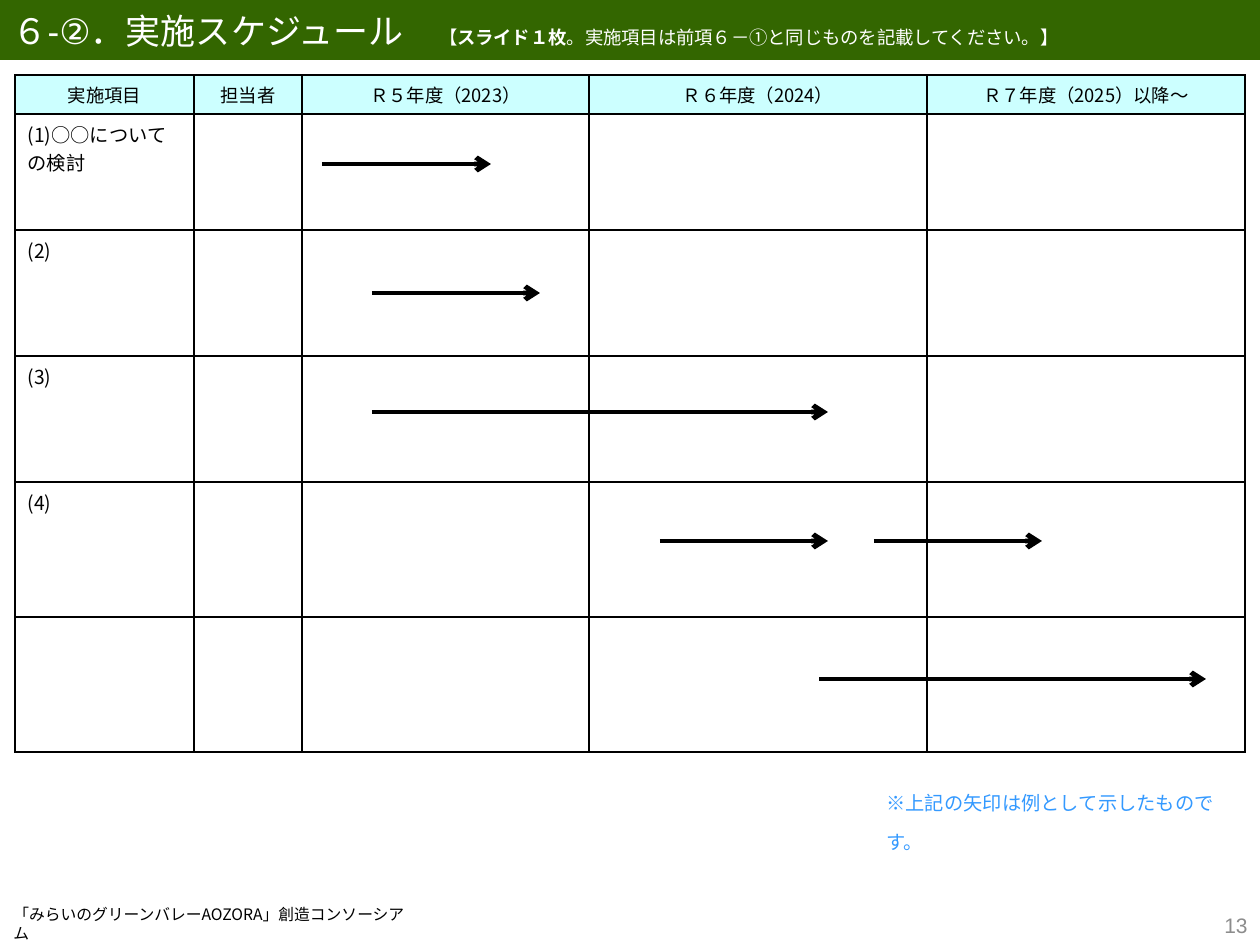
import pptx
import pptx.util
import pptx.dml.color
import pptx.enum.shapes
import pptx.enum.text
import pptx.oxml
import pptx.oxml.ns

RGB = pptx.dml.color.RGBColor
ALIGN = pptx.enum.text.PP_ALIGN
ANCHOR = pptx.enum.text.MSO_ANCHOR
NS = pptx.oxml.ns.nsdecls("a")

BLACK = RGB(0, 0, 0)
WHITE = RGB(0xFF, 0xFF, 0xFF)
GREEN = RGB(0x33, 0x66, 0x00)
CYAN = RGB(0xCC, 0xFF, 0xFF)
BLUE = RGB(0x33, 0x99, 0xFF)
GRAY = RGB(0x8C, 0x8C, 0x8C)
SANS = "Noto Sans CJK JP"

HEADS = ["実施項目", "担当者", "Ｒ５年度（2023）", "Ｒ６年度（2024）",
         "Ｒ７年度（2025）以降～"]
ITEMS = ["(1)○○についての検討", "(2)", "(3)", "(4)", ""]
COLS = [179, 108, 287, 338, 318]
ROWS = [35, 116, 126, 126, 135, 135]
# start x, end x and y, from the table's corner
SPANS = [(307, 476, 89), (357, 525, 218), (357, 813, 337),
         (645, 813, 466), (804, 1191, 604), (859, 1027, 466)]


def px(n):
    return pptx.util.Emu(round(n * 914400 / 126))


def write(para, text, size=11, font=SANS, color=BLACK, bold=False, align=ALIGN.LEFT):
    para.alignment = align
    run = para.add_run()
    run.text = text
    run.font.size = pptx.util.Pt(size)
    run.font.name = font
    run.font.bold = bold
    run.font.color.rgb = color
    run.font.fill._xPr.find(pptx.oxml.ns.qn("a:latin")).addnext(
        pptx.oxml.parse_xml(f'<a:ea {NS} typeface="{SANS}"/>'))


def title(slide, x, y, w, h):
    bar = slide.shapes.title
    bar.left, bar.top, bar.width, bar.height = map(px, (x, y, w, h))
    bar.fill.solid()
    bar.fill.fore_color.rgb = GREEN
    frame = bar.text_frame
    frame.auto_size = pptx.enum.text.MSO_AUTO_SIZE.NONE
    frame.vertical_anchor = ANCHOR.MIDDLE
    para = frame.paragraphs[0]
    write(para, "６-②．実施スケジュール　", size=20, font="Arial", color=WHITE)
    for text, bold in [("【", False), ("スライド１枚", True),
                       ("。実施項目は前項６－①と同じものを記載してください。】", False)]:
        write(para, text, size=10.5, font="Calibri", color=WHITE, bold=bold)


def border(cell):
    props = cell._tc.get_or_add_tcPr()
    for side in "LRTB":
        props.append(pptx.oxml.parse_xml(
            f'<a:ln{side} {NS} w="12700"><a:solidFill><a:srgbClr val="{BLACK}"/>'
            f'</a:solidFill></a:ln{side}>'))


def arrow(slide, x1, x2, y):
    line = slide.shapes.add_connector(
        pptx.enum.shapes.MSO_CONNECTOR.STRAIGHT, px(x1), px(y), px(x2), px(y))
    line.line.color.rgb = BLACK
    line.line.width = pptx.util.Pt(2.75)
    line.line._get_or_add_ln().append(
        pptx.oxml.parse_xml(f'<a:tailEnd {NS} type="arrow"/>'))
    line._element.spPr.append(pptx.oxml.parse_xml(f"<a:effectLst {NS}/>"))


def plan(slide, x, y):
    """Schedule table with its example arrows."""
    table = slide.shapes.add_table(len(ROWS), len(COLS), px(x), px(y),
                                   px(sum(COLS)), px(sum(ROWS))).table
    table.first_row = table.horz_banding = False
    for col, w in zip(table.columns, COLS):
        col.width = px(w)
    for row, h in zip(table.rows, ROWS):
        row.height = px(h)
    for cell in table.iter_cells():
        border(cell)
        cell.fill.background()
    for c, text in enumerate(HEADS):
        cell = table.cell(0, c)
        cell.fill.solid()
        cell.fill.fore_color.rgb = CYAN
        write(cell.text_frame.paragraphs[0], text, size=10.5, align=ALIGN.CENTER)
    for r, text in enumerate(ITEMS, 1):
        if text:
            write(table.cell(r, 0).text_frame.paragraphs[0], text)
    for x1, x2, dy in SPANS:
        arrow(slide, x + x1, x + x2, y + dy)


def label(slide, box, text, anchor=ANCHOR.TOP, foot=6, lead=None, **style):
    """Text box; foot is its bottom inset and lead its line pitch in points."""
    frame = slide.shapes.add_textbox(*map(px, box)).text_frame
    frame.word_wrap = True
    frame.vertical_anchor = anchor
    frame.margin_bottom = px(foot)
    para = frame.paragraphs[0]
    if lead:
        para.line_spacing = pptx.util.Pt(lead)
    write(para, text, **style)


def main():
    deck = pptx.Presentation()
    deck.slide_width, deck.slide_height = px(1260), px(945)
    slide = deck.slides.add_slide(deck.slide_layouts[5])
    title(slide, 0, 0, 1260, 60)
    plan(slide, 15, 75)
    label(slide, (874, 770, 364, 52), "※上記の矢印は例として示したものです。",
          lead=22, font="Calibri", color=BLUE)
    label(slide, (1, 915, 426, 28), "「みらいのグリーンバレーAOZORA」創造コンソーシアム",
          anchor=ANCHOR.BOTTOM, foot=0, size=9)
    label(slide, (976, 900, 284, 50), "13", anchor=ANCHOR.MIDDLE,
          size=12, font="Arial", color=GRAY, align=ALIGN.RIGHT)
    deck.save("out.pptx")


if __name__ == "__main__":
    main()
